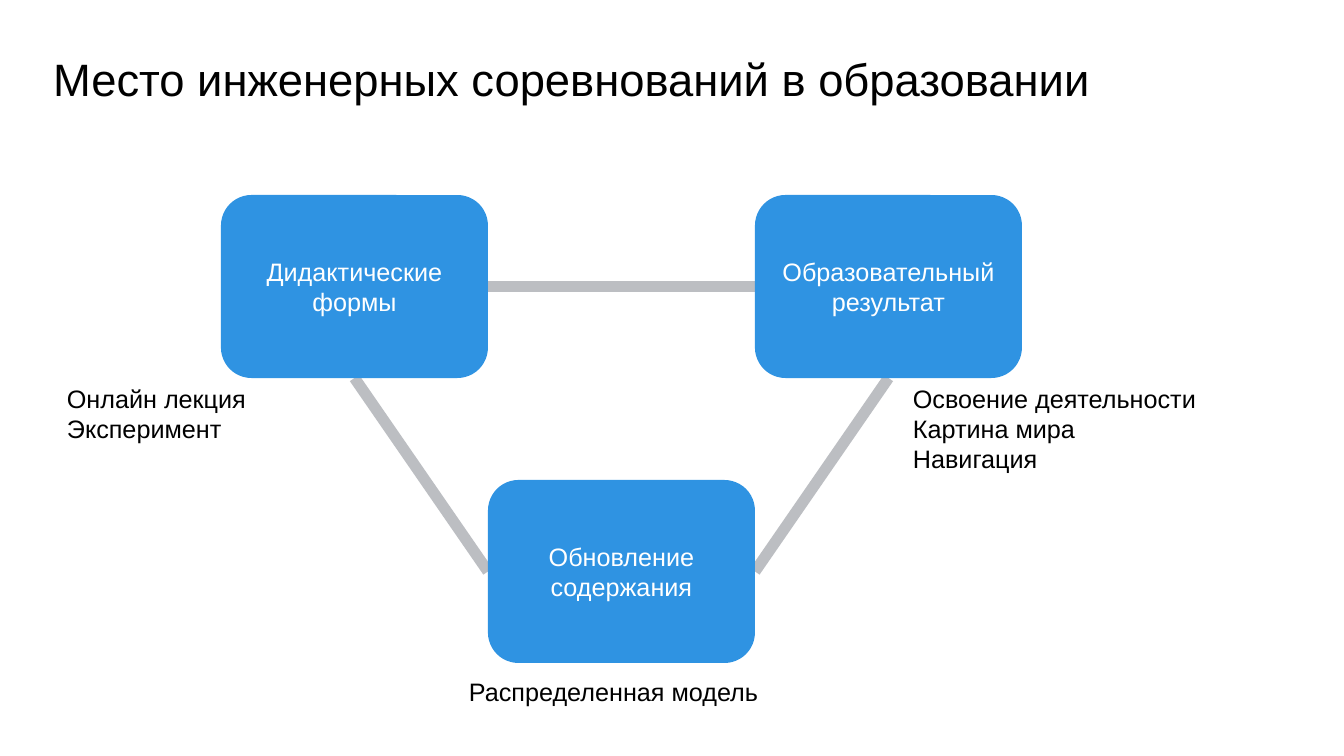
from lxml import etree
from pptx import Presentation, util as u
from pptx.dml.color import RGBColor
from pptx.enum import shapes, text
from pptx.oxml.ns import qn

SCALE = 914400 / 100.8
HUES = {"ink": "000000", "box": "2F93E2", "line": "BCBEC2", "light": "FFFFFF"}


def px(n):
    return u.Emu(round(n * SCALE))


def hue(name):
    return RGBColor.from_string(HUES[name])


class Pen:
    """Draws styled elements on the current slide."""

    face = "Arial"
    size = 18

    def __init__(self, slide):
        self.slide = slide

    def label(self, shape, lines, color="ink", size=None, align="LEFT", anchor="TOP", space=1.0):
        frame = shape.text_frame
        form = {
            "word_wrap": True,
            "auto_size": text.MSO_AUTO_SIZE.NONE,
            "vertical_anchor": getattr(text.MSO_ANCHOR, anchor),
            "text": "\n".join(lines),
        }
        for key, val in form.items():
            setattr(frame, key, val)
        style = {"name": self.face, "size": u.Pt(size or self.size)}
        for para in frame.paragraphs:
            para.alignment = getattr(text.PP_ALIGN, align)
            para.line_spacing = space
            for run in para.runs:
                for key, val in style.items():
                    setattr(run.font, key, val)
                run.font.color.rgb = hue(color)

    def title(self, words, area):
        head = self.slide.shapes.title
        for key, val in zip(("left", "top", "width", "height"), area):
            setattr(head, key, px(val))
        self.label(head, [words], size=32.4, anchor="MIDDLE", space=0.9)

    def note(self, lines, area):
        self.label(self.slide.shapes.add_textbox(*map(px, area)), lines)

    def box(self, words, area):
        kind = shapes.MSO_SHAPE.ROUNDED_RECTANGLE
        box = self.slide.shapes.add_shape(kind, *map(px, area))
        box.shadow.inherit = False
        box.fill.solid()
        box.fill.fore_color.rgb = hue("box")
        box.line.fill.background()
        self.label(box, [words], "light", align="CENTER", anchor="MIDDLE")
        return box

    def line(self):
        line = self.slide.shapes.add_connector(shapes.MSO_CONNECTOR.STRAIGHT, 0, 0, 0, 0)
        line.line.color.rgb = hue("line")
        line.line.width = u.Pt(8)
        etree.SubElement(line._element.spPr, qn("a:effectLst"))
        return line


def main():
    deck = Presentation()
    deck.slide_width, deck.slide_height = px(1344), px(756)
    pen = Pen(deck.slides.add_slide(deck.slide_layouts[5]))
    pen.title("Место инженерных соревнований в образовании", (43, 40, 1157, 83))

    notes = [
        (["Онлайн лекция", "Эксперимент"], (57, 378, 248, 71)),
        (["Распределенная модель"], (459, 671, 325, 41)),
        (["Освоение деятельности", "Картина мира", "Навигация"], (903, 378, 318, 102)),
    ]
    for lines, area in notes:
        pen.note(lines, area)

    links = [("form", 2, "core", 1), ("core", 3, "goal", 2), ("form", 3, "goal", 1)]
    ties = [pen.line() for _ in links]

    wide, high, left = 267, 183, 221
    cells = {
        "form": ("Дидактические формы", 0, 195),
        "goal": ("Образовательный результат", 2, 195),
        "core": ("Обновление содержания", 1, 480),
    }
    boxes = {
        key: pen.box(words, (left + col * wide, top, wide, high))
        for key, (words, col, top) in cells.items()
    }
    for tie, (start, out, end, into) in zip(ties, links):
        tie.begin_connect(boxes[start], out)
        tie.end_connect(boxes[end], into)

    deck.save("out.pptx")


if __name__ == "__main__":
    main()
